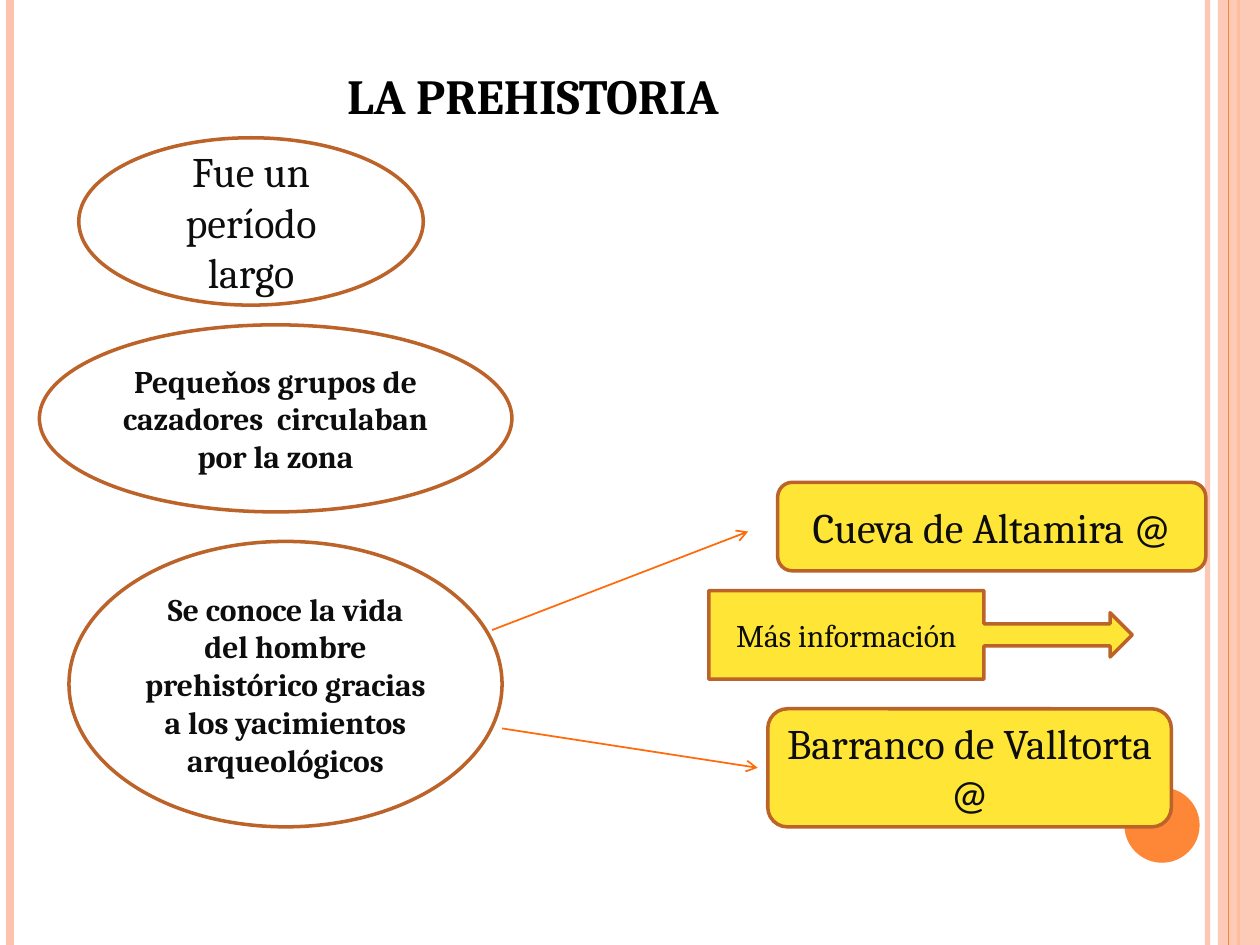
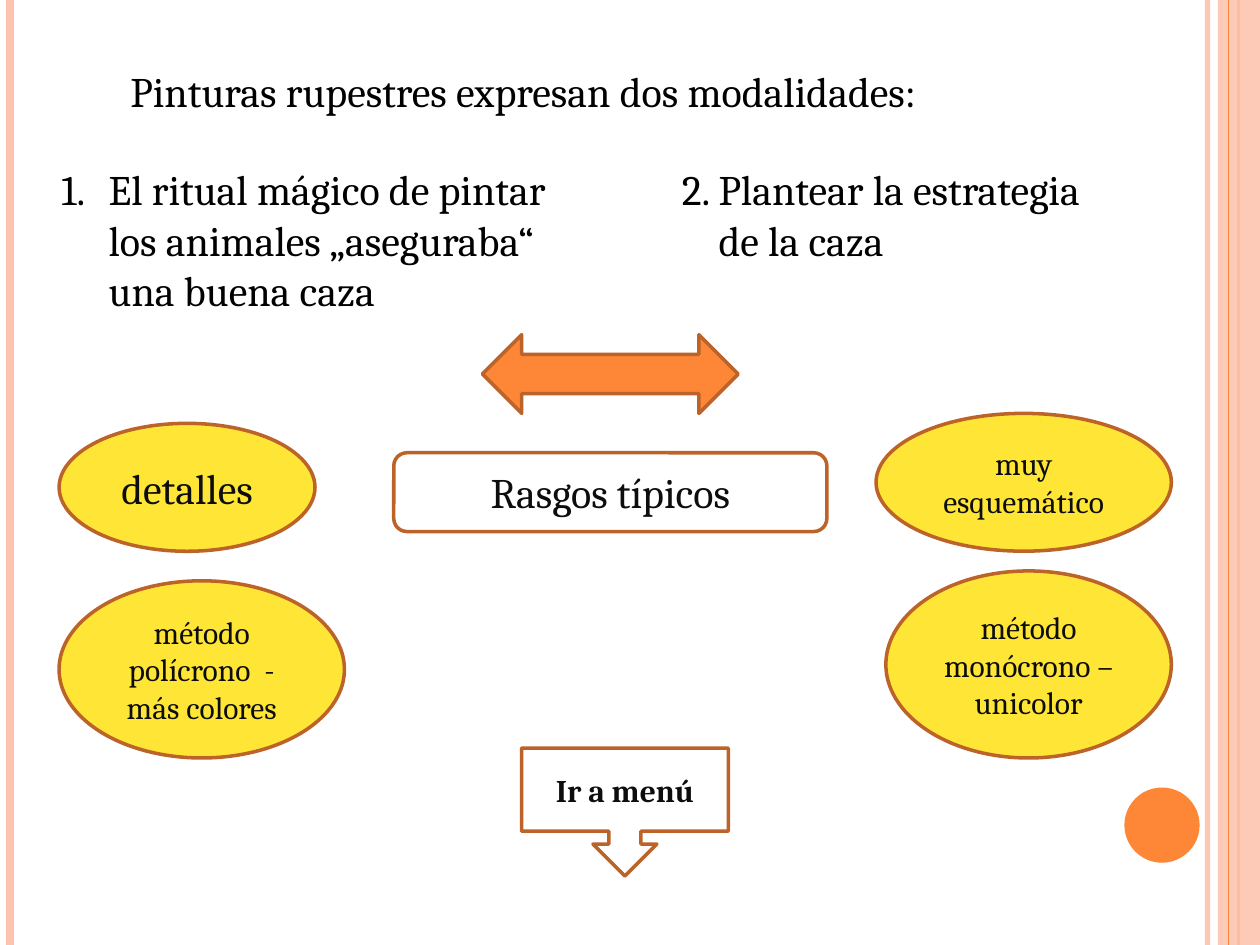
from lxml.etree import SubElement
from pptx import Presentation
from pptx.dml.color import RGBColor
from pptx.enum.shapes import MSO_CONNECTOR, MSO_SHAPE
from pptx.enum.text import MSO_ANCHOR, PP_ALIGN
from pptx.oxml.ns import qn
from pptx.util import Pt

WHITE, BLACK, INK = "FFFFFF", "000000", "0D0D0D"
ORANGE, PEACH, RUST, ARROW, YELLOW = "FE8637", "FEC3AE", "BC6329", "FF6B0A", "FFE636"
WIDTH, HEIGHT = 720, 540


def rgb(value):
    """Turn a hex string into a colour."""
    return RGBColor.from_string(value)


class Deck:
    """Hold the style and the current slide, and draw each kind of element."""

    font, symbol_font = "Cambria", "Calibri"

    def __init__(self):
        """Start an empty presentation of the right size."""
        self.prs = Presentation()
        self.prs.slide_width, self.prs.slide_height = Pt(WIDTH), Pt(HEIGHT)

    def slide(self, title, at, **fmt):
        """Add a slide with the shared bands, the disc and a title."""
        self.s = self.prs.slides.add_slide(self.prs.slide_layouts[6])
        for x, color, width, alpha in ((690, PEACH, 3, 93), (5.6, PEACH, 4.5, 100),
                                       (707.6, ORANGE, 1.5, 100)):
            self.line((x, 0), (x, HEIGHT), color, width, alpha)
        band = self.shape(MSO_SHAPE.RECTANGLE, (696, 0, 24, HEIGHT), PEACH, line=None)
        self.fade(band, 87)
        self.line((702, 0), (702, HEIGHT), ORANGE, 0.75)
        self.shape(MSO_SHAPE.OVAL, (642.5, 450, 43, 43), ORANGE, line=None)
        self.text(title, at, **fmt)

    def fade(self, sp, percent):
        """Set the opacity of the colour of a shape or line."""
        for clr in sp._element.spPr.iter(qn("a:srgbClr")):
            SubElement(clr, qn("a:alpha"), val=str(percent * 1000))

    def line(self, start, end, color, width, alpha=100, arrow=False):
        """Draw a straight line, with an arrowhead at its end if asked."""
        c = self.s.shapes.add_connector(MSO_CONNECTOR.STRAIGHT, *map(Pt, start + end))
        c.line.color.rgb, c.line.width = rgb(color), Pt(width)
        if alpha < 100:
            self.fade(c, alpha)
        if arrow:
            SubElement(c.line._get_or_add_ln(), qn("a:tailEnd"), type="arrow")
        SubElement(c._element.spPr, qn("a:effectLst"))

    def shape(self, kind, at, fill, text="", line=RUST, **fmt):
        """Draw a preset shape with centred text."""
        sp = self.s.shapes.add_shape(kind, *map(Pt, at))
        sp.shadow.inherit = False
        sp.fill.solid()
        sp.fill.fore_color.rgb = rgb(fill)
        if line:
            sp.line.color.rgb, sp.line.width = rgb(line), Pt(2)
        else:
            sp.line.fill.background()
        if text:
            sp.text_frame.vertical_anchor = MSO_ANCHOR.MIDDLE
            self.fill_text(sp.text_frame, text, PP_ALIGN.CENTER, color=INK, **fmt)
        return sp

    def text(self, text, at, number=None, hang=0, **fmt):
        """Add a text box, as a numbered item with a hanging indent if asked."""
        tf = self.s.shapes.add_textbox(*map(Pt, at)).text_frame
        p = self.fill_text(tf, text, PP_ALIGN.LEFT, **fmt)
        if number:
            pPr = p._p.get_or_add_pPr()
            pPr.set("marL", str(Pt(hang)))
            pPr.set("indent", str(Pt(-hang)))
            SubElement(pPr, qn("a:buFont"), typeface=self.font)
            SubElement(pPr, qn("a:buAutoNum"), type="arabicPeriod", startAt=str(number))

    def fill_text(self, tf, text, align, color=BLACK, size=24, bold=False):
        """Fill a text frame, setting the at sign in the symbol font."""
        tf.word_wrap = True
        p = tf.paragraphs[0]
        p.alignment = align
        words, sign, _ = text.partition("@")
        for part, name in ((words, self.font), (sign, self.symbol_font)):
            for i, row in enumerate(part.split("\n") if part else []):
                if i:
                    p.add_line_break()
                r = p.add_run()
                r.text = row
                r.font.color.rgb = rgb(color)
                for key, value in {"name": name, "size": Pt(size), "bold": bold}.items():
                    setattr(r.font, key, value)
        return p


def prehistory(deck):
    """Build the slide on prehistory."""
    deck.slide("LA PREHISTORIA", (191.25, 34, 354, 41), size=28, bold=True)
    small = {"size": 18, "bold": True}
    for text, at, fmt in (
            ("Fue un período largo", (45, 78.75, 196.9, 95.6), {}),
            ("Pequeňos grupos de cazadores  circulaban por la zona",
             (22.5, 185.6, 270, 106.9), small),
            ("Se conoce la vida del hombre prehistórico gracias a los yacimientos "
             "arqueológicos", (39.4, 309.4, 247.5, 163.1), small)):
        deck.shape(MSO_SHAPE.OVAL, at, WHITE, text, **fmt)
    for start, end in (((281.25, 360), (427.5, 303.75)), ((286.9, 416.25), (433, 438.75))):
        deck.line(start, end, ARROW, 1, arrow=True)
    for text, at in (("Cueva de Altamira @", (444.4, 275.6, 244.7, 50.6)),
                     ("Barranco de Valltorta @", (438.75, 405, 230.6, 67.5))):
        deck.shape(MSO_SHAPE.ROUNDED_RECTANGLE, at, YELLOW, text)
    deck.shape(MSO_SHAPE.RIGHT_ARROW_CALLOUT, (405, 337.5, 242, 50.6), YELLOW,
               "Más información", size=18)


def paintings(deck):
    """Build the slide on cave paintings."""
    deck.slide("Pinturas rupestres expresan dos modalidades:", (67.5, 34, 546, 36))
    deck.shape(MSO_SHAPE.LEFT_RIGHT_ARROW, (275.6, 191.25, 146.25, 45), ORANGE)
    for number, (text, at, hang) in enumerate((
            ("El ritual mágico de pintar\nlos animales „aseguraba“\nuna buena caza",
             (28, 90, 338, 94), 27),
            ("Plantear la estrategia\nde la caza", (382.5, 90, 286.5, 65), 21)), 1):
        deck.text(text, at, number, hang)
    deck.shape(MSO_SHAPE.ROUNDED_RECTANGLE, (225, 258.75, 247.5, 45), WHITE, "Rasgos típicos")
    for text, at, size in (
            ("detalles", (33.75, 241.9, 146.25, 73.1), 24),
            ("método polícrono  - más colores", (33.75, 331.9, 163.1, 101.25), 18),
            ("muy esquemático", (500.6, 236.25, 168.75, 78.75), 18),
            ("método monócrono – unicolor", (506.25, 326.25, 163.1, 106.9), 18)):
        deck.shape(MSO_SHAPE.OVAL, at, YELLOW, text, size=size)
    deck.shape(MSO_SHAPE.DOWN_ARROW_CALLOUT, (298.1, 427.5, 118.1, 73.1), WHITE,
               "Ir a menú", size=18, bold=True)


def main():
    """Build and save the slides."""
    deck = Deck()
    prehistory(deck)
    paintings(deck)
    deck.prs.save("out.pptx")


if __name__ == "__main__":
    main()
